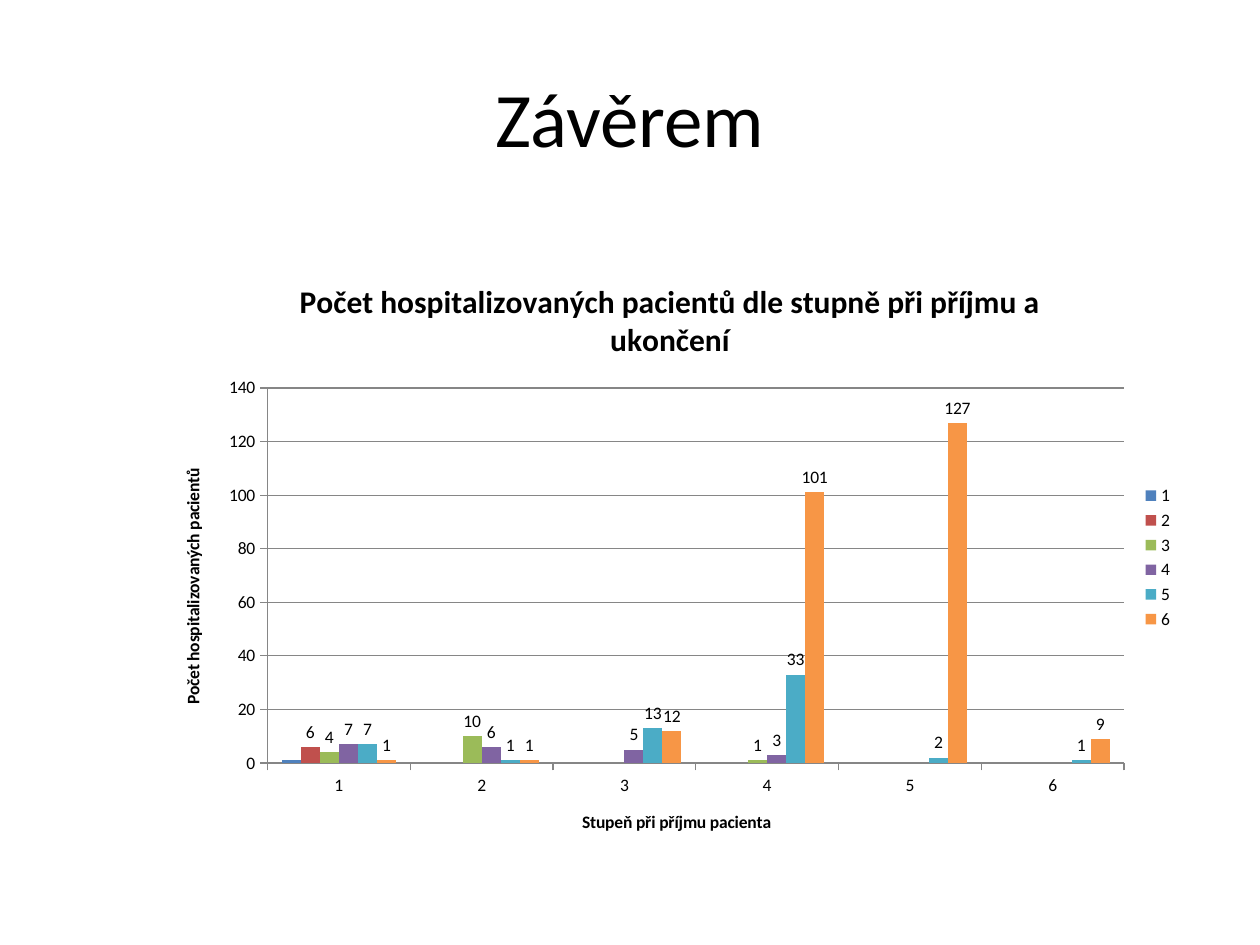
from lxml import etree
from pptx import Presentation
from pptx.chart.data import CategoryChartData
from pptx.dml.color import RGBColor
from pptx.enum.chart import (XL_CHART_TYPE, XL_LABEL_POSITION,
                             XL_LEGEND_POSITION, XL_TICK_MARK)
from pptx.enum.text import MSO_ANCHOR, PP_ALIGN
from pptx.oxml.ns import qn
from pptx.util import Emu, Pt

COLUMNS = XL_CHART_TYPE.COLUMN_CLUSTERED
OUTSIDE_END = XL_LABEL_POSITION.OUTSIDE_END
LEGEND_RIGHT = XL_LEGEND_POSITION.RIGHT
TICK_OUTSIDE = XL_TICK_MARK.OUTSIDE
MIDDLE = MSO_ANCHOR.MIDDLE
CENTER = PP_ALIGN.CENTER

BLACK = RGBColor(0x00, 0x00, 0x00)
GREY = RGBColor(0x86, 0x86, 0x86)
BLUE = RGBColor(0x4F, 0x81, 0xBD)
RED = RGBColor(0xC0, 0x50, 0x4D)
GREEN = RGBColor(0x9B, 0xBB, 0x59)
PURPLE = RGBColor(0x80, 0x64, 0xA2)
AQUA = RGBColor(0x4B, 0xAC, 0xC6)
ORANGE = RGBColor(0xF7, 0x96, 0x46)

PX_PER_INCH = 126
FONT = "Calibri"
GRADES = ["1", "2", "3", "4", "5", "6"]
# One row per grade at discharge, one value per grade at admission.
PATIENTS = [
    (BLUE, [1, None, None, None, None, None]),
    (RED, [6, None, None, None, None, None]),
    (GREEN, [4, 10, None, 1, None, None]),
    (PURPLE, [7, 6, 5, 3, None, None]),
    (AQUA, [7, 1, 13, 33, 2, 1]),
    (ORANGE, [1, 1, 12, 101, 127, 9]),
]


def px(length):
    return Emu(round(length * 914400 / PX_PER_INCH))


def style_font(font, size, bold=False, color=BLACK):
    font.name = FONT
    font.size = Pt(size)
    font.bold = bold
    font.color.rgb = color


def write(frame, text, size, bold=False, color=BLACK, align=CENTER):
    para = frame.paragraphs[0]
    para.alignment = align
    span = para.add_run()
    span.text = text
    style_font(span.font, size, bold, color)


def place_plot(chart, **fractions):
    """Fix the inner plot area at fractions of the chart's size."""
    plot_area = chart.element.find(".//" + qn("c:plotArea"))
    layout = plot_area.find(qn("c:layout"))
    if layout is None:
        layout = etree.Element(qn("c:layout"))
        plot_area.insert(0, layout)
    manual = etree.SubElement(layout, qn("c:manualLayout"))
    settings = {"layoutTarget": "inner", "xMode": "edge", "yMode": "edge", **fractions}
    for name, value in settings.items():
        etree.SubElement(manual, qn("c:" + name)).set("val", str(value))


class SlideBuilder:
    def __init__(self, slide):
        self.slide = slide
        self.title_size = 44
        self.chart_title_size = 18
        self.chart_text_size = 10

    def title(self, text, left, top, width, height):
        box = self.slide.shapes.add_textbox(px(left), px(top), px(width), px(height))
        box.text_frame.word_wrap = True
        box.text_frame.vertical_anchor = MIDDLE
        write(box.text_frame, text, self.title_size)

    def axis(self, axis, title):
        write(axis.axis_title.text_frame, title, self.chart_text_size, bold=True)
        axis.major_tick_mark = TICK_OUTSIDE
        axis.format.line.color.rgb = GREY

    def column_chart(self, title, category_title, value_title, left, top, width, height):
        data = CategoryChartData()
        data.categories = GRADES
        for grade, (_, counts) in zip(GRADES, PATIENTS):
            data.add_series(grade, counts)
        chart = self.slide.shapes.add_chart(
            COLUMNS, px(left), px(top), px(width), px(height), data).chart
        style_font(chart.font, self.chart_text_size)
        write(chart.chart_title.text_frame, title, self.chart_title_size, bold=True)
        chart.has_legend = True
        chart.legend.position = LEGEND_RIGHT
        chart.legend.include_in_layout = False

        self.axis(chart.category_axis, category_title)
        self.axis(chart.value_axis, value_title)
        chart.value_axis.major_gridlines.format.line.color.rgb = GREY

        plot = chart.plots[0]
        plot.vary_by_categories = False
        plot.gap_width = 150
        plot.overlap = 0
        for index, (series, (color, _)) in enumerate(zip(plot.series, PATIENTS)):
            series.format.fill.solid()
            series.format.fill.fore_color.rgb = color
            if index > 0:
                series.data_labels.show_value = True
                series.data_labels.position = OUTSIDE_END
        return chart


def main():
    deck = Presentation()
    deck.slide_width, deck.slide_height = px(1260), px(945)
    page = SlideBuilder(deck.slides.add_slide(deck.slide_layouts[6]))
    page.title("Závěrem", 63, 38, 1134, 158)
    chart = page.column_chart(
        "Počet hospitalizovaných pacientů dle stupně při příjmu a ukončení",
        "Stupeň při příjmu pacienta",
        "Počet hospitalizovaných pacientů",
        154, 255, 1032, 605)
    place_plot(chart, x=0.11, y=0.22, w=0.83, h=0.62)
    deck.save("out.pptx")


if __name__ == "__main__":
    main()
